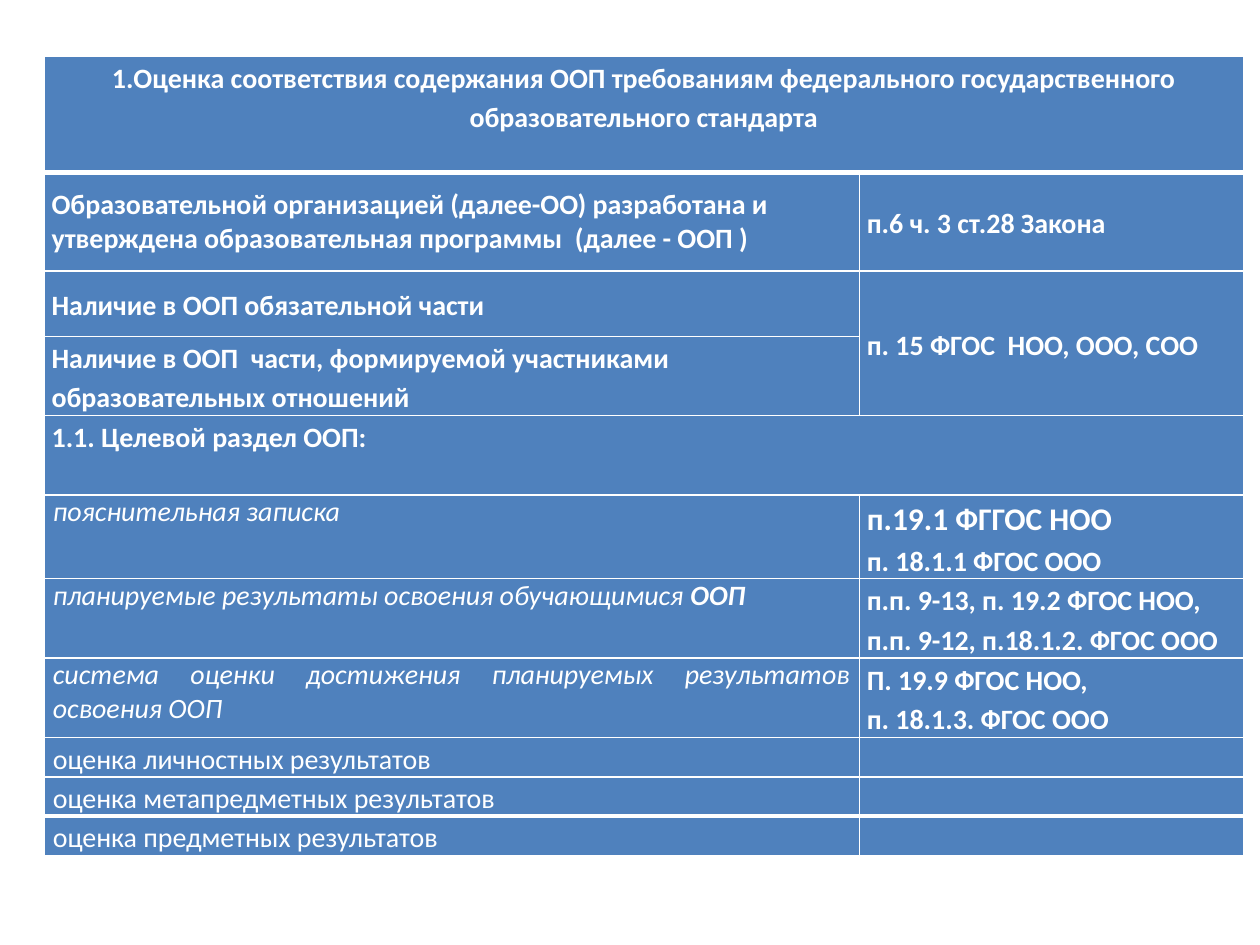
from dataclasses import dataclass

import pptx
import pptx.dml.color
import pptx.enum.text
import pptx.oxml
import pptx.oxml.ns
import pptx.util
from pptx.util import Inches, Pt

ALIGN = pptx.enum.text.PP_ALIGN
ANCHOR = pptx.enum.text.MSO_ANCHOR


@dataclass(frozen=True)
class Theme:
    font: str = "Calibri"
    text: str = "FFFFFF"
    fill: str = "4F81BD"
    size: int = 16
    large: int = 18
    thin: int = 1
    thick: int = 3


@dataclass(frozen=True)
class CellStyle:
    bold: bool = True
    italic: bool = False
    align: object = ALIGN.LEFT
    anchor: object = ANCHOR.MIDDLE
    spacing: float = 1.15
    inset: float = 0.06


THEME = Theme()
HEADING = CellStyle(align=ALIGN.CENTER, anchor=ANCHOR.TOP)
SECTION = CellStyle(anchor=ANCHOR.TOP)
REQUIREMENT = CellStyle(spacing=1.0)
PLAIN = CellStyle()
ITEM = CellStyle(bold=False, italic=True, align=ALIGN.JUSTIFY,
                 anchor=ANCHOR.TOP, spacing=1.0, inset=0.07)
RESULT = CellStyle(bold=False, anchor=ANCHOR.TOP, inset=0.07)

# Row height, style of the criterion, criterion, paragraphs of its legal basis
CRITERIA = [
    (0.92, HEADING, "1.Оценка соответствия содержания ООП требованиям федерального "
     "государственного образовательного стандарта", []),
    (0.78, REQUIREMENT, "Образовательной организацией (далее-ОО) разработана и "
     "утверждена образовательная программы  (далее - ООП )", ["п.6 ч. 3 ст.28 Закона"]),
    (0.52, PLAIN, "Наличие в ООП обязательной части", ["п. 15 ФГОС  НОО, ООО, СОО"]),
    (0.63, PLAIN, "Наличие в ООП  части, формируемой участниками "
     "образовательных отношений", []),
    (0.63, SECTION, "1.1. Целевой раздел ООП:", []),
    (0.66, ITEM, "пояснительная записка", ["п.19.1 ФГГОС НОО", "п. 18.1.1 ФГОС ООО"]),
    (0.63, ITEM, "планируемые результаты освоения обучающимися ",
     ["п.п. 9-13, п. 19.2 ФГОС НОО, п.п. 9-12, п.18.1.2. ФГОС ООО"]),
    (0.63, ITEM, "система оценки достижения планируемых результатов освоения ООП",
     ["П. 19.9 ФГОС НОО,", "п. 18.1.3. ФГОС ООО"]),
    (0.31, RESULT, "оценка личностных результатов", []),
    (0.31, RESULT, "оценка метапредметных результатов", []),
    (0.31, RESULT, "оценка предметных результатов", []),
]
COLUMNS = (6.47, 3.05)
LEFT, TOP = 0.35, 0.45
MERGES = [((0, 0), (0, 1)), ((2, 1), (3, 1)), ((4, 0), (4, 1))]
THICK_RULES = {1, len(CRITERIA) - 1}  # rows with a heavy line above
OUTCOMES_ROW, BOLD_ENDING = 6, "ООП"
EXPLANATORY_ROW = 5


def rule_weight(row):
    return THEME.thick if row in THICK_RULES else THEME.thin


def add_borders(cell, row):
    weights = {"lnL": THEME.thin, "lnR": THEME.thin,
               "lnT": rule_weight(row), "lnB": rule_weight(row + 1)}
    properties = cell._tc.get_or_add_tcPr()
    for side, weight in weights.items():
        properties.append(pptx.oxml.parse_xml(
            f'<a:{side} {pptx.oxml.ns.nsdecls("a")} w="{Pt(weight)}">'
            f'<a:solidFill><a:srgbClr val="{THEME.text}"/></a:solidFill></a:{side}>'))


def write_cell(cell, paragraphs, style):
    cell.margin_left = cell.margin_right = Inches(style.inset)
    cell.margin_top = cell.margin_bottom = 0
    cell.vertical_anchor = style.anchor
    cell.fill.solid()
    cell.fill.fore_color.rgb = pptx.dml.color.RGBColor.from_string(THEME.fill)
    cell.text_frame.text = "\n".join(paragraphs)
    for paragraph in cell.text_frame.paragraphs:
        paragraph.alignment = style.align
        paragraph.line_spacing = style.spacing
        font = paragraph.font
        font.name, font.size = THEME.font, Pt(THEME.size)
        font.bold, font.italic = style.bold, style.italic
        font.color.rgb = pptx.dml.color.RGBColor.from_string(THEME.text)


def main():
    deck = pptx.Presentation()
    deck.slide_width, deck.slide_height = Inches(10), Inches(7.5)
    slide = deck.slides.add_slide(deck.slide_layouts[6])

    heights = [criterion[0] for criterion in CRITERIA]
    table = slide.shapes.add_table(
        len(CRITERIA), len(COLUMNS), Inches(LEFT), Inches(TOP),
        Inches(sum(COLUMNS)), Inches(sum(heights))).table
    table.first_row = table.horz_banding = False
    for column, width in zip(table.columns, COLUMNS):
        column.width = Inches(width)

    for row, (height, style, criterion, basis) in enumerate(CRITERIA):
        table.rows[row].height = Inches(height)
        for column, (paragraphs, cell_style) in enumerate(
                [([criterion], style), (basis, PLAIN)]):
            cell = table.cell(row, column)
            add_borders(cell, row)
            write_cell(cell, paragraphs, cell_style)

    ending = table.cell(OUTCOMES_ROW, 0).text_frame.paragraphs[0].add_run()
    ending.text, ending.font.bold = BOLD_ENDING, True
    explanatory_basis = table.cell(EXPLANATORY_ROW, 1).text_frame.paragraphs[0]
    explanatory_basis.font.size = Pt(THEME.large)

    for first, last in MERGES:
        table.cell(*first).merge(table.cell(*last))
    deck.save("out.pptx")


if __name__ == "__main__":
    main()
